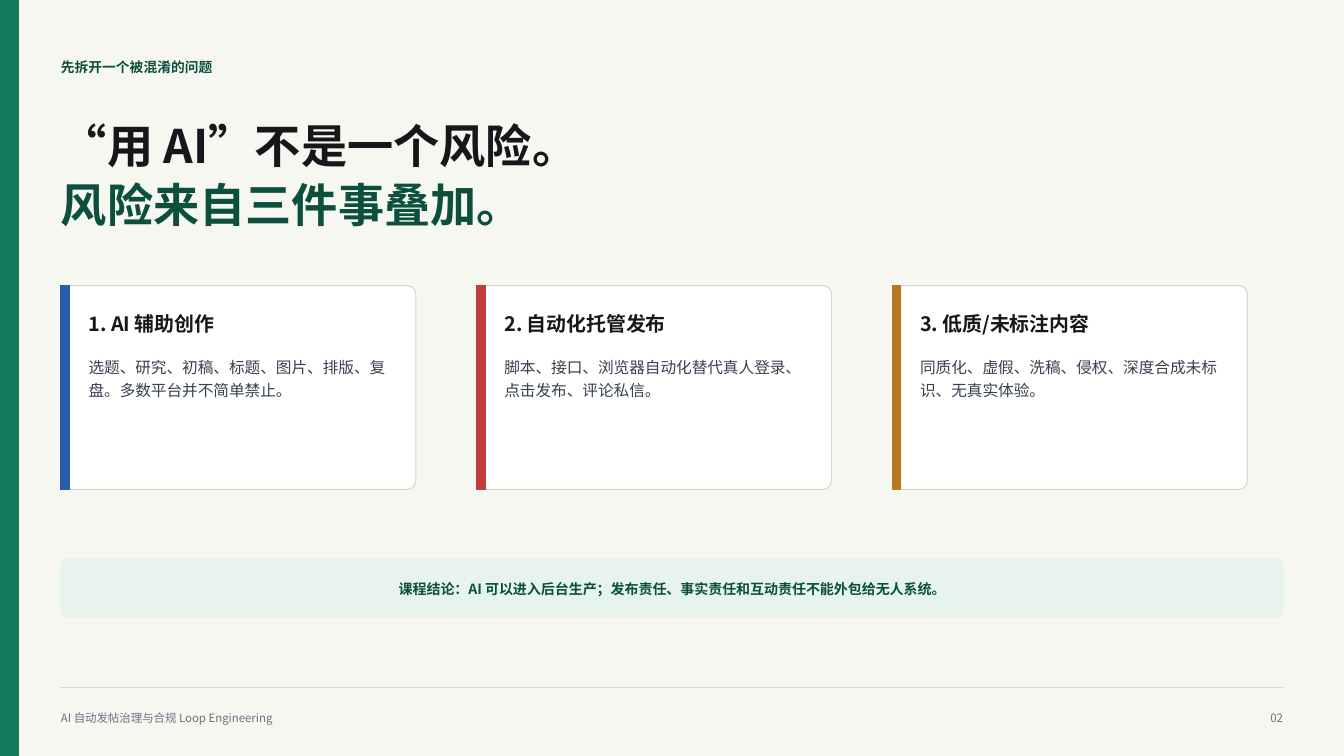
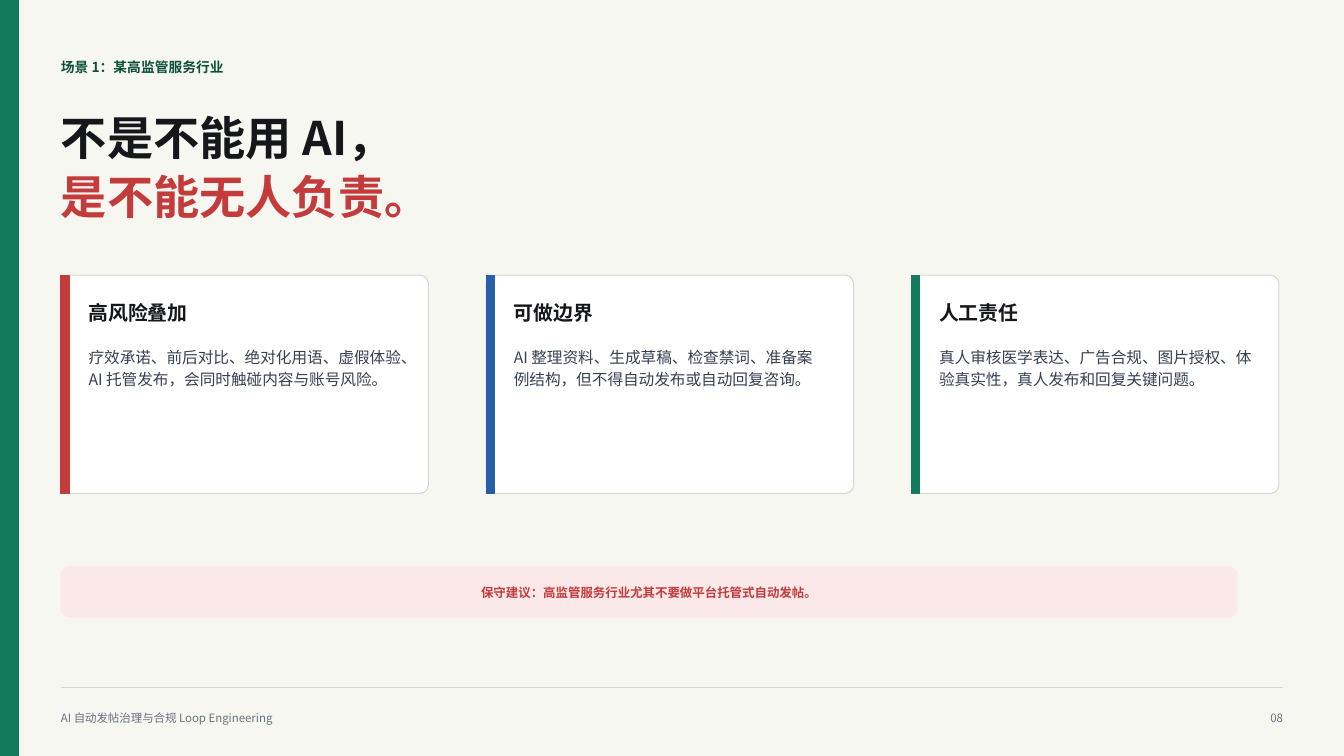
from dataclasses import dataclass

from lxml.etree import SubElement
from pptx import Presentation
from pptx.dml.color import RGBColor
from pptx.enum.shapes import MSO_CONNECTOR as Connector, MSO_SHAPE as Preset
from pptx.enum.text import MSO_ANCHOR as Anchor, MSO_AUTO_SIZE as AutoSize, PP_ALIGN as Align
from pptx.oxml.ns import qn
from pptx.util import Pt

FONT = "Noto Sans CJK SC"
PAPER, WHITE, RULE = "F7F7F2", "FFFFFF", "D8D6CE"
INK, BODY, MUTED = "15171A", "374151", "6B7280"
GREEN, DEEP_GREEN, PALE_GREEN = "147A5C", "0C4F3D", "E7F4EE"
RED, PALE_RED, BLUE, AMBER = "C43B3B", "FBE9E9", "285EA8", "B7791F"

SLIDE_W, SLIDE_H = 960, 540
MARGIN = 43.5
CONTENT_W = SLIDE_W - 2 * MARGIN
CORNER = 6
HAIRLINE = 0.75
COURSE = "AI 自动发帖治理与合规 Loop Engineering"


@dataclass(frozen=True)
class Card:
    heading: str
    detail: str
    accent: str


@dataclass(frozen=True)
class CardRow:
    top: float
    width: float
    height: float
    pitch: float
    cards: tuple[Card, ...]


@dataclass(frozen=True)
class Banner:
    message: str
    top: float
    width: float
    height: float
    size: float
    color: str
    fill: str


@dataclass(frozen=True)
class Page:
    number: str
    eyebrow: str
    title_top: float
    title: str
    punchline: str
    punch_color: str
    row: CardRow
    banner: Banner


PAGES = (
    Page(
        "02", "先拆开一个被混淆的问题", 81.5,
        "“用 AI”不是一个风险。", "风险来自三件事叠加。", DEEP_GREEN,
        CardRow(204, 253.5, 145.5, 297, (
            Card("1. AI 辅助创作",
                 "选题、研究、初稿、标题、图片、排版、复盘。多数平台并不简单禁止。", BLUE),
            Card("2. 自动化托管发布",
                 "脚本、接口、浏览器自动化替代真人登录、点击发布、评论私信。", RED),
            Card("3. 低质/未标注内容",
                 "同质化、虚假、洗稿、侵权、深度合成未标识、无真实体验。", AMBER),
        )),
        Banner("课程结论：AI 可以进入后台生产；发布责任、事实责任和互动责任不能外包给无人系统。",
               399, CONTENT_W, 42, 10, DEEP_GREEN, PALE_GREEN),
    ),
    Page(
        "08", "场景 1：某高监管服务行业", 76,
        "不是不能用 AI，", "是不能无人负责。", RED,
        CardRow(196.5, 262.5, 156, 303.75, (
            Card("高风险叠加",
                 "疗效承诺、前后对比、绝对化用语、虚假体验、AI 托管发布，会同时触碰内容与账号风险。", RED),
            Card("可做边界",
                 "AI 整理资料、生成草稿、检查禁词、准备案例结构，但不得自动发布或自动回复咨询。", BLUE),
            Card("人工责任",
                 "真人审核医学表达、广告合规、图片授权、体验真实性，真人发布和回复关键问题。", GREEN),
        )),
        Banner("保守建议：高监管服务行业尤其不要做平台托管式自动发帖。",
               404.75, 840, 36, 8.9, RED, PALE_RED),
    ),
)


def rgb(color: str) -> RGBColor:
    return RGBColor.from_string(color)


def reset_frame(frame, anchor=Anchor.TOP) -> None:
    """Gives a text frame zero insets, wrapping and a fixed size."""
    frame.margin_left = frame.margin_top = frame.margin_right = frame.margin_bottom = 0
    frame.word_wrap = True
    frame.auto_size = AutoSize.NONE
    frame.vertical_anchor = anchor


def write(paragraph, text: str, *, size: float, color: str, bold: bool = False,
          align=Align.LEFT, spacing=1.12) -> None:
    paragraph.alignment = align
    paragraph.line_spacing = spacing
    run = paragraph.add_run()
    run.text = text
    font = run.font
    font.size, font.bold, font.name = Pt(size), bold, FONT
    font.color.rgb = rgb(color)
    SubElement(run._r.get_or_add_rPr(), qn("a:ea"), typeface=FONT)


def add_label(slide, text: str, left: float, top: float, width: float, height: float,
              **text_format) -> None:
    frame = slide.shapes.add_textbox(Pt(left), Pt(top), Pt(width), Pt(height)).text_frame
    reset_frame(frame)
    write(frame.paragraphs[0], text, **text_format)


def add_panel(slide, left: float, top: float, width: float, height: float, fill: str,
              line: str | None = None, rounded: bool = False):
    preset = Preset.ROUNDED_RECTANGLE if rounded else Preset.RECTANGLE
    panel = slide.shapes.add_shape(preset, Pt(left), Pt(top), Pt(width), Pt(height))
    if rounded:
        panel.adjustments[0] = CORNER / min(width, height)
    panel.shadow.inherit = False
    panel.fill.solid()
    panel.fill.fore_color.rgb = rgb(fill)
    panel.line.color.rgb = rgb(line or fill)
    panel.line.width = Pt(HAIRLINE)
    return panel


def add_frame(slide, number: str) -> None:
    """Draws the side band, footer rule, course name and page number."""
    add_panel(slide, 0, 0, 13.5, SLIDE_H, GREEN)
    right = SLIDE_W - MARGIN
    rule = slide.shapes.add_connector(Connector.STRAIGHT, Pt(MARGIN), Pt(491), Pt(right), Pt(491))
    rule.line.color.rgb = rgb(RULE)
    rule.line.width = Pt(HAIRLINE)
    SubElement(rule._element.spPr, qn("a:effectLst"))
    add_label(slide, COURSE, MARGIN, 507, 480, 18, size=8.2, color=MUTED)
    add_label(slide, number, right - 36, 507, 36, 18, size=8.2, color=MUTED, align=Align.RIGHT)


def add_heading(slide, page: Page) -> None:
    add_label(slide, page.eyebrow, MARGIN, 40.5, 645, 18, size=9.8, color=DEEP_GREEN, bold=True)
    title = slide.shapes.title
    title.left, title.top, title.width, title.height = (
        Pt(MARGIN), Pt(page.title_top), Pt(585), Pt(84))
    frame = title.text_frame
    reset_frame(frame)
    style = dict(size=33, bold=True, spacing=Pt(42))
    write(frame.paragraphs[0], page.title, color=INK, **style)
    write(frame.add_paragraph(), page.punchline, color=page.punch_color, **style)


def add_card(slide, card: Card, left: float, row: CardRow) -> None:
    add_panel(slide, left, row.top, row.width, row.height, WHITE, line=RULE, rounded=True)
    add_panel(slide, left, row.top, 6, row.height, card.accent)
    inner = left + 19.75
    add_label(slide, card.heading, inner, row.top + 16.5, row.width - 36, 21,
              size=14.2, color=INK, bold=True)
    add_label(slide, card.detail, inner, row.top + 49.5, row.width - 39, row.height - 60,
              size=11.2, color=BODY, spacing=1.18)


def add_banner(slide, banner: Banner) -> None:
    panel = add_panel(slide, MARGIN, banner.top, banner.width, banner.height,
                      banner.fill, rounded=True)
    reset_frame(panel.text_frame, Anchor.MIDDLE)
    write(panel.text_frame.paragraphs[0], banner.message, size=banner.size,
          color=banner.color, bold=True, align=Align.CENTER)


def add_page(deck, page: Page) -> None:
    title_only = deck.slide_layouts[5]
    slide = deck.slides.add_slide(title_only)
    add_frame(slide, page.number)
    add_heading(slide, page)
    for index, card in enumerate(page.row.cards):
        add_card(slide, card, MARGIN + index * page.row.pitch, page.row)
    add_banner(slide, page.banner)


def main() -> None:
    deck = Presentation()
    deck.slide_width, deck.slide_height = Pt(SLIDE_W), Pt(SLIDE_H)
    backdrop = deck.slide_master.background.fill
    backdrop.solid()
    backdrop.fore_color.rgb = rgb(PAPER)
    for page in PAGES:
        add_page(deck, page)
    deck.save("out.pptx")


if __name__ == "__main__":
    main()
